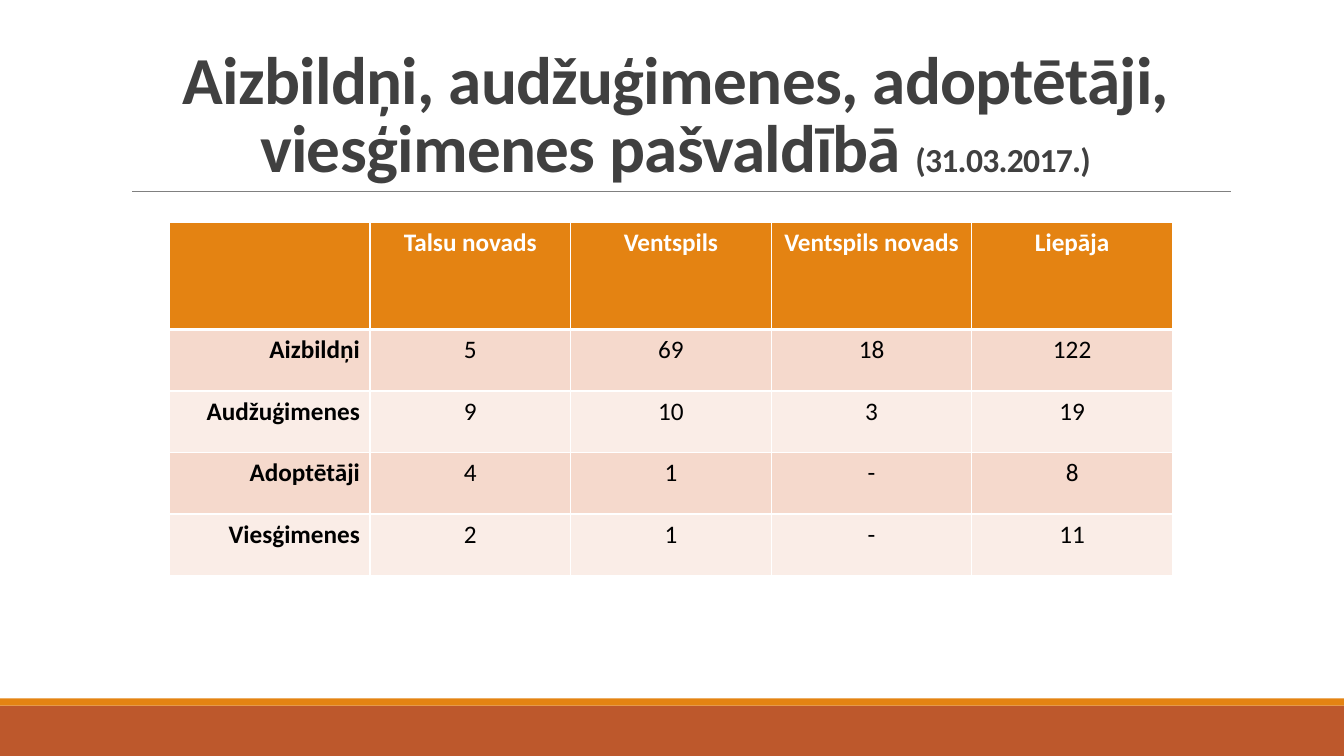
from lxml import etree
from pptx import Presentation
from pptx.dml.color import RGBColor
from pptx.enum.shapes import MSO_CONNECTOR, MSO_SHAPE
from pptx.enum.text import MSO_ANCHOR, MSO_AUTO_SIZE, PP_ALIGN
from pptx.oxml.ns import qn
from pptx.util import Inches, Pt

RECTANGLE = MSO_SHAPE.RECTANGLE
STRAIGHT = MSO_CONNECTOR.STRAIGHT
BOTTOM = MSO_ANCHOR.BOTTOM
NO_AUTOFIT = MSO_AUTO_SIZE.NONE
CENTER = PP_ALIGN.CENTER
RIGHT = PP_ALIGN.RIGHT

FONT = "Calibri"
TITLE_ONLY_LAYOUT = 5
COLORS = {
    "orange": "E48312",
    "rust": "BD582C",
    "rule": "808080",
    "title": "404040",
    "text": "000000",
    "white": "FFFFFF",
    "band_dark": "F5D9CC",
    "band_light": "FAEDE7",
}
ROWS = [
    ["", "Talsu novads", "Ventspils", "Ventspils novads", "Liepāja"],
    ["Aizbildņi", "5", "69", "18", "122"],
    ["Audžuģimenes", "9", "10", "3", "19"],
    ["Adoptētāji", "4", "1", "-", "8"],
    ["Viesģimenes", "2", "1", "-", "11"],
]
COLUMN_WIDTH = 1.99
HEADER_HEIGHT = 1.06
ROW_HEIGHT = 0.61


def color(name):
    return RGBColor.from_string(COLORS[name])


def add_text(paragraph, text, size=18, color_name="text", bold=False,
             align=CENTER, spacing=None):
    paragraph.alignment = align
    run = paragraph.add_run()
    run.text = text
    run.font.name = FONT
    run.font.size = Pt(size)
    run.font.bold = bold
    run.font.color.rgb = color(color_name)
    if spacing is not None:
        run.font._element.set("spc", str(round(spacing * 100)))


def add_bar(slide, top, height, color_name):
    bar = slide.shapes.add_shape(
        RECTANGLE, 0, Inches(top), Inches(13.33), Inches(height))
    bar.shadow.inherit = False
    bar.fill.solid()
    bar.fill.fore_color.rgb = color(color_name)
    bar.line.fill.background()


def add_rule(slide, left, right, top):
    rule = slide.shapes.add_connector(
        STRAIGHT, Inches(left), Inches(top), Inches(right), Inches(top))
    rule.line.color.rgb = color("rule")
    rule.line.width = Pt(0.5)
    etree.SubElement(rule._element.spPr, qn("a:effectLst"))


def add_title(slide):
    title = slide.shapes.title
    title.left, title.top = Inches(1.2), Inches(0.31)
    title.width, title.height = Inches(11), Inches(1.59)
    frame = title.text_frame
    frame.word_wrap = True
    frame.auto_size = NO_AUTOFIT
    frame.vertical_anchor = BOTTOM
    paragraph = frame.paragraphs[0]
    paragraph.line_spacing = 0.85
    style = {"color_name": "title", "bold": True, "spacing": -0.5}
    add_text(paragraph, "Aizbildņi, audžuģimenes, adoptētāji, viesģimenes pašvaldībā ",
             size=48, **style)
    add_text(paragraph, "(31.03.2017.)", size=24, **style)


def set_borders(cell, top, bottom):
    properties = cell._tc.get_or_add_tcPr()
    widths = {"a:lnL": 1, "a:lnR": 1, "a:lnT": top, "a:lnB": bottom}
    for position, (tag, width) in enumerate(widths.items()):
        line = etree.Element(qn(tag), w=str(Pt(width)))
        fill = etree.SubElement(line, qn("a:solidFill"))
        etree.SubElement(fill, qn("a:srgbClr"), val=COLORS["white"])
        properties.insert(position, line)


def format_cell(cell, text, row, column):
    header = row == 0
    band = "band_dark" if row % 2 else "band_light"
    cell.fill.solid()
    cell.fill.fore_color.rgb = color("orange" if header else band)
    set_borders(cell, top=3 if row == 1 else 1, bottom=3 if header else 1)
    if text:
        add_text(cell.text_frame.paragraphs[0], text,
                 color_name="white" if header else "text",
                 bold=header or column == 0,
                 align=RIGHT if column == 0 else CENTER)


def add_family_table(slide):
    row_count, column_count = len(ROWS), len(ROWS[0])
    height = HEADER_HEIGHT + ROW_HEIGHT * (row_count - 1)
    table = slide.shapes.add_table(
        row_count, column_count, Inches(1.68), Inches(2.21),
        Inches(COLUMN_WIDTH * column_count), Inches(height)).table
    for column in table.columns:
        column.width = Inches(COLUMN_WIDTH)
    for row, texts in enumerate(ROWS):
        table.rows[row].height = Inches(ROW_HEIGHT if row else HEADER_HEIGHT)
        for column, text in enumerate(texts):
            format_cell(table.cell(row, column), text, row, column)


def main():
    presentation = Presentation()
    presentation.slide_width = Inches(13.33)
    presentation.slide_height = Inches(7.5)
    slide = presentation.slides.add_slide(
        presentation.slide_layouts[TITLE_ONLY_LAYOUT])
    slide.background.fill.solid()
    slide.background.fill.fore_color.rgb = color("white")
    add_bar(slide, 7, 0.5, "rust")
    add_bar(slide, 6.93, 0.07, "orange")
    add_rule(slide, 1.31, 12.21, 1.9)
    add_title(slide)
    add_family_table(slide)
    presentation.save("out.pptx")


if __name__ == "__main__":
    main()
